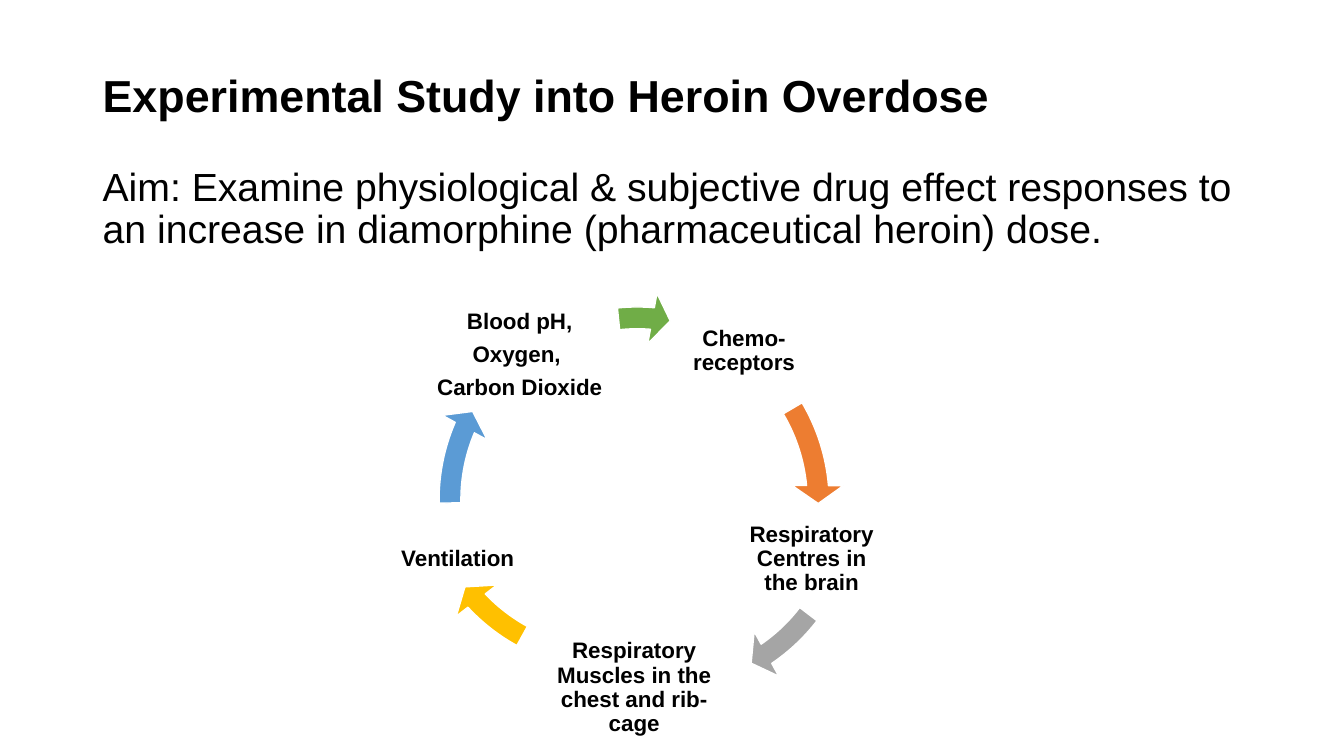
from pptx import Presentation
from pptx.dml.color import RGBColor
from pptx.enum.shapes import MSO_SHAPE as Shape
from pptx.enum.text import MSO_ANCHOR as Anchor, PP_ALIGN as Align
from pptx.util import Pt

PX = 9144
ARROW_SIZE = 416


def rgb(value):
    return RGBColor.from_string(value)


class CycleSlide:
    font = "Arial"
    ink = "000000"

    def __init__(self, prs):
        self.s = prs.slides.add_slide(prs.slide_layouts[6])

    def text(self, box, lines, size, bold=False, spacing=1.0):
        sp = self.s.shapes.add_textbox(*(v * PX for v in box))
        tf = sp.text_frame
        tf.word_wrap = True
        tf.text = "\n".join(lines)
        for p in tf.paragraphs:
            p.line_spacing = spacing
            p.font.name = self.font
            p.font.size = Pt(size)
            p.font.bold = bold
            p.font.color.rgb = rgb(self.ink)
        return tf

    def stage(self, box, lines):
        tf = self.text(box, lines, 16, True, 0.9)
        tf.vertical_anchor = Anchor.MIDDLE
        tf.margin_left = tf.margin_right = 2 * PX
        tf.margin_top = tf.margin_bottom = 2 * PX
        for p in tf.paragraphs:
            p.alignment = Align.CENTER
            p.space_after = Pt(6.3)

    def arrow(self, left, top, start, end, color):
        sp = self.s.shapes.add_shape(
            Shape.CIRCULAR_ARROW, left * PX, top * PX, ARROW_SIZE * PX, ARROW_SIZE * PX
        )
        degree = 0.6
        values = (0.052, 5.6 * degree, end * degree, start * degree, 0.061)
        for i, value in enumerate(values):
            sp.adjustments[i] = value
        sp.shadow.inherit = False
        sp.fill.solid()
        sp.fill.fore_color.rgb = rgb(color)
        sp.line.color.rgb = rgb("FFFFFF")
        sp.line.width = Pt(1)


STAGES = [
    ((660, 293, 156, 111), ["Chemo-receptors"]),
    ((735, 499, 140, 111), ["Respiratory Centres in the brain"]),
    ((540, 627, 178, 111), ["Respiratory Muscles in the chest and rib-cage"]),
    ((394, 499, 120, 111), ["Ventilation"]),
    ((422, 297, 187, 111), ["Blood pH,", "Oxygen, ", "Carbon Dioxide"]),
]
ARROWS = [
    (421, 290, 329.43, 354.9, "ED7D31"),
    (449, 290, 37.55, 55.58, "A5A5A5"),
    (398, 263, 118.83, 136.85, "FFC000"),
    (421, 288, 179.04, 203.13, "5B9BD5"),
    (424, 290, 264.19, 274.74, "70AD47"),
]


def main():
    prs = Presentation()
    prs.slide_width = 1333 * PX
    prs.slide_height = 750 * PX
    slide = CycleSlide(prs)
    slide.text((92, 62, 1184, 64), ["Experimental Study into Heroin Overdose"], 32, True)
    aim = (
        "Aim: Examine physiological & subjective drug effect responses to "
        "an increase in diamorphine (pharmaceutical heroin) dose."
    )
    slide.text((92, 161, 1150, 108), [aim], 28, spacing=0.9)
    for stage, arrow in zip(STAGES, ARROWS):
        slide.stage(*stage)
        slide.arrow(*arrow)
    prs.save("out.pptx")


if __name__ == "__main__":
    main()
